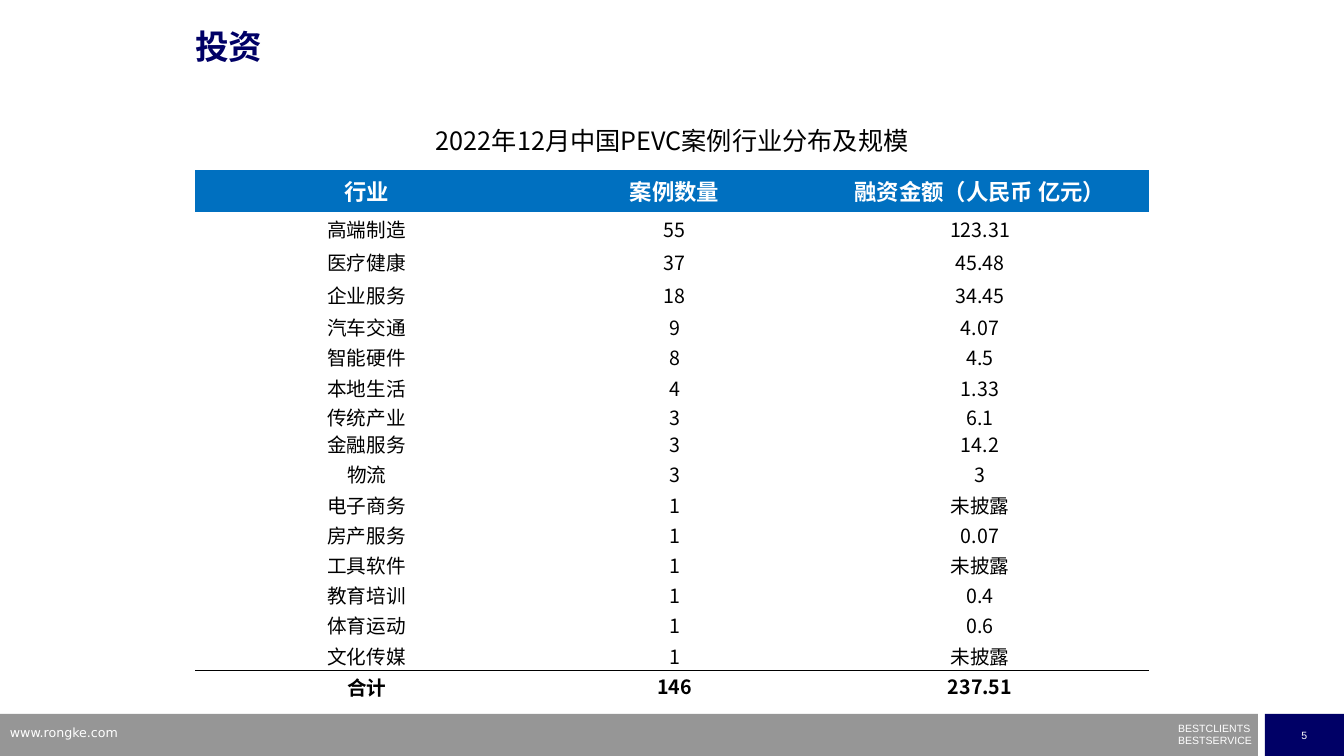
from lxml import etree
from pptx import Presentation
from pptx.dml.color import RGBColor
from pptx.enum import shapes, text
from pptx.oxml import ns
from pptx.util import Pt

WHITE = RGBColor(0xFF, 0xFF, 0xFF)
BLACK = RGBColor(0x00, 0x00, 0x00)
NAVY = RGBColor(0x00, 0x00, 0x66)
GREY = RGBColor(0x96, 0x96, 0x96)
BLUE = RGBColor(0x00, 0x70, 0xC0)
CJK = "Noto Sans CJK SC"
LEFT = text.PP_ALIGN.LEFT
CENTER = text.PP_ALIGN.CENTER
PLAIN_TABLE = "{2D5ABB26-0587-4C30-8999-92F81FD0307C}"

TITLE = "2022年12月中国PEVC案例行业分布及规模"
HEADINGS = ("行业", "案例数量", "融资金额（人民币 亿元）")
INDUSTRIES = (
    ("高端制造", "55", "123.31"),
    ("医疗健康", "37", "45.48"),
    ("企业服务", "18", "34.45"),
    ("汽车交通", "9", "4.07"),
    ("智能硬件", "8", "4.5"),
    ("本地生活", "4", "1.33"),
    ("传统产业", "3", "6.1"),
    ("金融服务", "3", "14.2"),
    ("物流", "3", "3"),
    ("电子商务", "1", "未披露"),
    ("房产服务", "1", "0.07"),
    ("工具软件", "1", "未披露"),
    ("教育培训", "1", "0.4"),
    ("体育运动", "1", "0.6"),
    ("文化传媒", "1", "未披露"),
)
TOTAL = ("合计", "146", "237.51")
COLUMN_WIDTHS = (244.8, 195, 241.5)
ROW_HEIGHTS = [44, 29.5] + [23.75] * 3 + [21.6] * 3 + [18.75] + [21.6] * 8 + [23.75]


def write(frame, words, size=14, font=CJK, color=BLACK, bold=False,
          align=LEFT, spacing=None, before=0):
    for index, line in enumerate(words.split("\n")):
        para = frame.add_paragraph() if index else frame.paragraphs[0]
        para.alignment = align
        if spacing:
            para.line_spacing = spacing
        if index and before:
            para.space_before = Pt(before)
        span = para.add_run()
        span.text = line
        span.font.size = Pt(size)
        span.font.bold = bold
        span.font.color.rgb = color
        span.font.name = font
        etree.SubElement(span.font._element, ns.qn("a:ea"), typeface=font)


class Page:
    def __init__(self, deck):
        self.slide = deck.slides.add_slide(deck.slide_layouts[6])

    def block(self, left, top, width, height, color):
        box = self.slide.shapes.add_shape(
            shapes.MSO_SHAPE.RECTANGLE, Pt(left), Pt(top), Pt(width), Pt(height))
        box.shadow.inherit = False
        box.fill.solid()
        box.fill.fore_color.rgb = color
        box.line.fill.background()
        return box

    def label(self, left, top, width, height, words, inset=True, **style):
        box = self.slide.shapes.add_textbox(Pt(left), Pt(top), Pt(width), Pt(height))
        frame = box.text_frame
        frame.word_wrap = True
        if not inset:
            frame.margin_left = frame.margin_right = 0
            frame.margin_top = frame.margin_bottom = 0
        write(frame, words, **style)

    def table(self, left, top, widths, heights):
        holder = self.slide.shapes.add_table(
            len(heights), len(widths), Pt(left), Pt(top), Pt(sum(widths)), Pt(sum(heights)))
        grid = holder.table
        grid.first_row = grid.horz_banding = False
        grid._tbl.tblPr.find(ns.qn("a:tableStyleId")).text = PLAIN_TABLE
        for column, width in zip(grid.columns, widths):
            column.width = Pt(width)
        for row, height in zip(grid.rows, heights):
            row.height = Pt(height)
        return grid

    def cell(self, cell, words, fill=None, margin=0.72, bottom=0, edge=None, **style):
        cell.vertical_anchor = text.MSO_ANCHOR.MIDDLE
        cell.margin_left = cell.margin_right = cell.margin_top = Pt(margin)
        cell.margin_bottom = Pt(bottom)
        if edge:
            line = etree.SubElement(cell._tc.get_or_add_tcPr(), ns.qn(edge), w=str(Pt(1)))
            paint = etree.SubElement(line, ns.qn("a:solidFill"))
            etree.SubElement(paint, ns.qn("a:srgbClr"), val=str(BLACK))
        if fill is None:
            cell.fill.background()
        else:
            cell.fill.solid()
            cell.fill.fore_color.rgb = fill
        write(cell.text_frame, words, align=CENTER, **style)


def main():
    deck = Presentation()
    deck.slide_width, deck.slide_height = Pt(960), Pt(540)
    page = Page(deck)

    page.block(0, 510, 898.5, 30, GREY)
    number = page.block(903.5, 510, 56.5, 30, NAVY).text_frame
    number.word_wrap = False
    number.vertical_anchor = text.MSO_ANCHOR.MIDDLE
    write(number, "5", size=7.5, font="Arial", color=WHITE, align=CENTER)
    page.label(841.5, 520, 55, 14.5, "BESTCLIENTS\nBESTSERVICE", inset=False,
               size=7.5, font="Arial", color=WHITE, spacing=0.5, before=4)
    page.label(0, 514, 230, 19, "www.rongke.com", size=9, font="DejaVu Sans", color=WHITE)
    page.label(139.5, 21.5, 648, 28, "投资", inset=False,
               size=24, color=NAVY, bold=True, spacing=0.9)

    grid = page.table(139.5, 77.75, COLUMN_WIDTHS, ROW_HEIGHTS)
    grid.cell(0, 0).merge(grid.cell(0, 2))
    page.cell(grid.cell(0, 0), TITLE, margin=0, size=18)
    last = len(INDUSTRIES) + 1
    for column, heading in enumerate(HEADINGS):
        page.cell(grid.cell(1, column), heading, fill=BLUE, margin=0,
                  size=16, color=WHITE, bold=True)
    for row, industry in enumerate(INDUSTRIES, 2):
        for column, value in enumerate(industry):
            page.cell(grid.cell(row, column), value, fill=WHITE,
                      edge="a:lnB" if row == last else None)
    for column, value in enumerate(TOTAL):
        page.cell(grid.cell(last + 1, column), value, fill=WHITE, bold=True,
                  margin=0.72 if column else 0, bottom=3.6 if column else 0, edge="a:lnT")

    deck.save("out.pptx")


if __name__ == "__main__":
    main()
